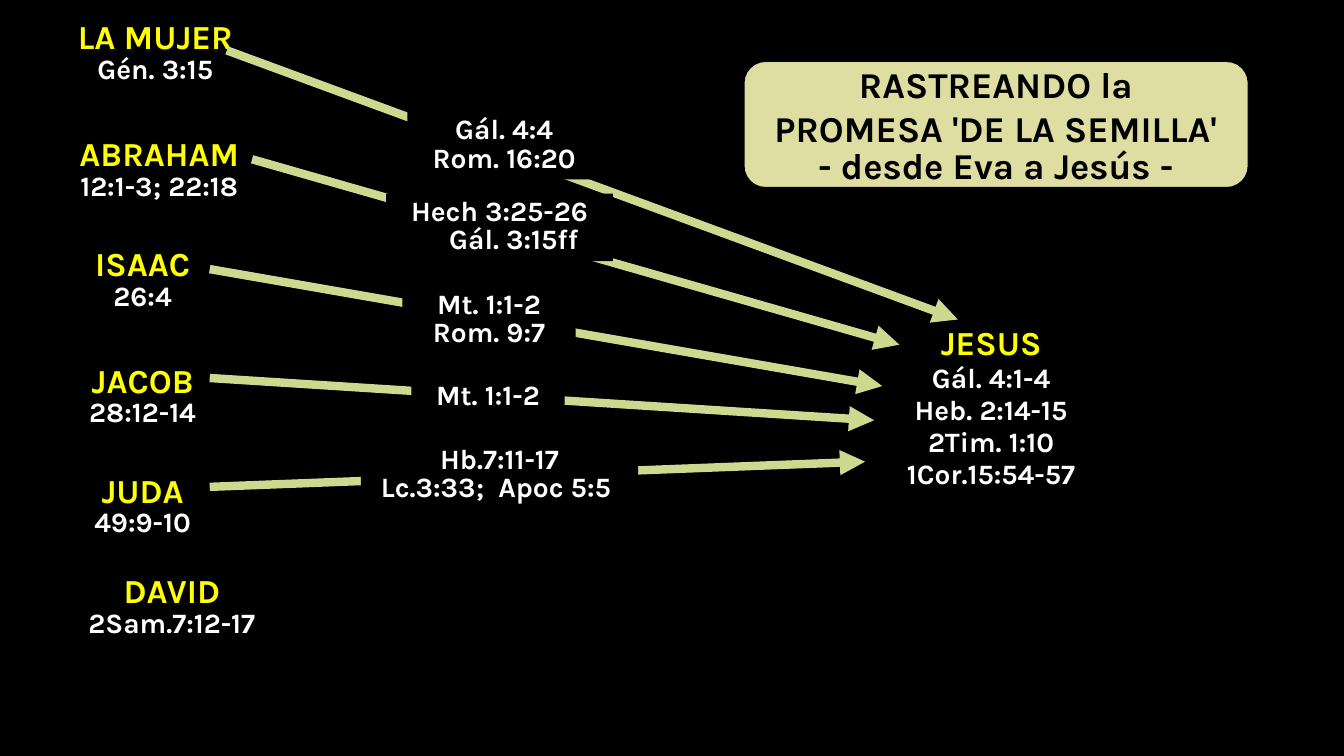
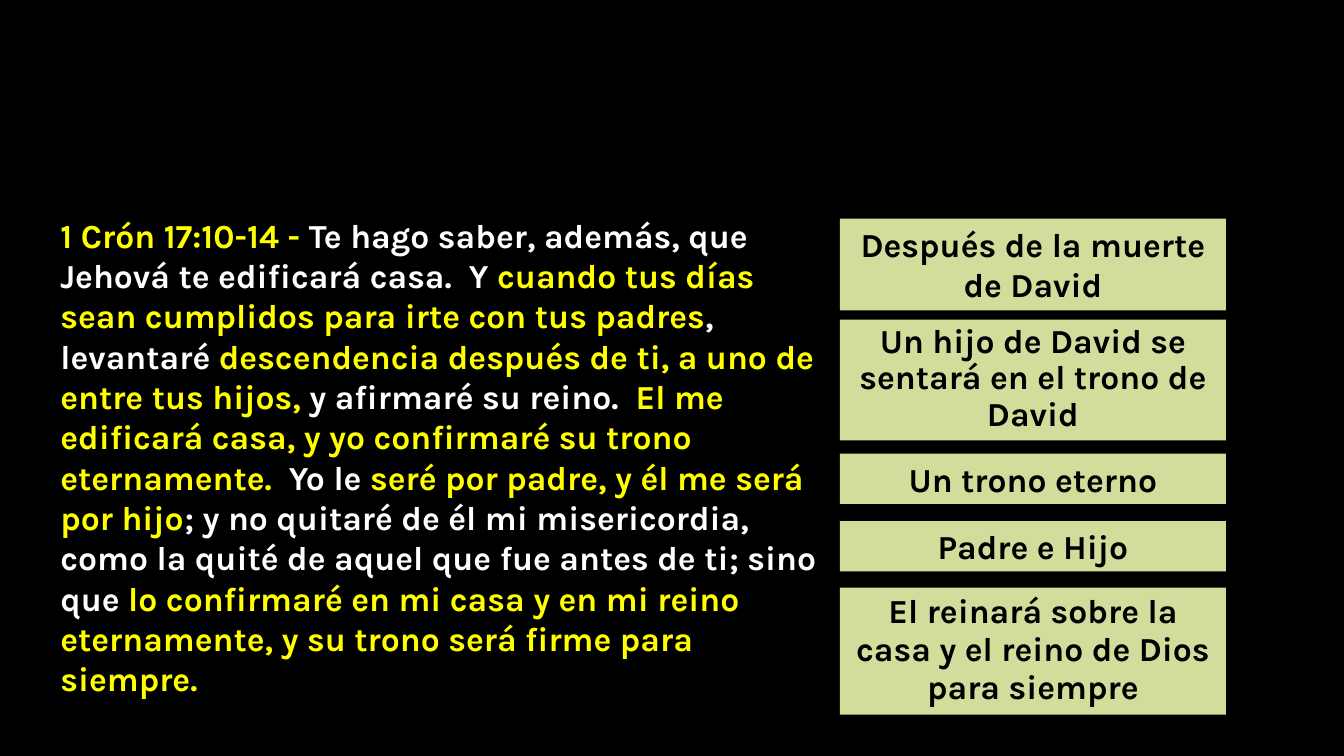
"""Build two slides tracing the promise of the seed from Eve to Jesus."""
from dataclasses import dataclass
from itertools import cycle
from typing import Any

from pptx import Presentation
from pptx.dml.color import RGBColor
from pptx.enum.shapes import MSO_CONNECTOR as Connector, MSO_SHAPE as Preset
from pptx.enum.text import MSO_ANCHOR as Anchor, MSO_AUTO_SIZE as AutoSize, PP_ALIGN as Align
from pptx.oxml.ns import qn
from pptx.util import Inches, Pt
from lxml.etree import SubElement

BLACK = RGBColor(0x00, 0x00, 0x00)
WHITE = RGBColor(0xFF, 0xFF, 0xFF)
YELLOW = RGBColor(0xFF, 0xFF, 0x00)
ARROW_GREEN = RGBColor(0xCD, 0xD9, 0x8F)
POINT_GREEN = RGBColor(0xD2, 0xDD, 0x9B)
BANNER_CREAM = RGBColor(0xDE, 0xDE, 0xA2)

FONT = {"name": "Karla", "bold": True}
NAME = FONT | {"size": Pt(24)}
REFERENCE = FONT | {"size": Pt(20)}
BANNER = FONT | {"size": Pt(26)}
GROWING = {"word_wrap": True, "auto_size": AutoSize.SHAPE_TO_FIT_TEXT, "vertical_anchor": Anchor.TOP}
CENTERED = {"word_wrap": False, "auto_size": AutoSize.NONE, "vertical_anchor": Anchor.MIDDLE}


@dataclass(frozen=True)
class Box:
    left: float
    top: float
    width: float
    height: float

    def lengths(self) -> tuple[int, ...]:
        return tuple(map(Inches, (self.left, self.top, self.width, self.height)))


@dataclass(frozen=True)
class Run:
    text: str
    color: RGBColor
    font: dict[str, Any]


@dataclass(frozen=True)
class Line:
    runs: tuple[Run, ...]
    spacing: float | None = None
    align: Align = Align.CENTER
    indent: float = 0


@dataclass(frozen=True)
class Person:
    box: Box
    name: str
    references: tuple[str, ...]
    spacing: float = 0.85


@dataclass(frozen=True)
class Fulfilment:
    box: Box
    references: tuple[str, ...]
    last_indent: float = 0


@dataclass(frozen=True)
class Arrow:
    start: tuple[float, float]
    end: tuple[float, float]


@dataclass(frozen=True)
class Point:
    top: float
    height: float
    text: str
    spacing: float | None = None


PEOPLE = (
    Person(Box(0.58, 0.17, 1.92, 0.74), "LA MUJER", ("Gén. 3:15",)),
    Person(Box(0.58, 1.33, 2, 1.02), "ABRAHAM", ("12:1-3; 22:18",)),
    Person(Box(0.58, 2.42, 1.67, 0.74), "ISAAC", ("26:4",)),
    Person(Box(0.58, 3.58, 1.67, 0.74), "JACOB", ("28:12-14",)),
    Person(Box(0.58, 4.67, 1.67, 0.74), "JUDA", ("49:9-10",)),
    Person(Box(0.58, 5.67, 2.25, 0.73), "DAVID", ("2Sam.7:12-17",)),
    Person(Box(8.67, 3.17, 2.32, 1.76), "JESUS",
           ("Gál. 4:1-4", "Heb. 2:14-15", "2Tim. 1:10", "1Cor.15:54-57"), 0.95),
)
ARROWS = (
    Arrow((2.25, 0.5), (9.5, 3.17)),
    Arrow((2.5, 1.58), (8.92, 3.42)),
    Arrow((2.08, 2.67), (8.75, 3.83)),
    Arrow((2.08, 3.75), (8.67, 4.17)),
    Arrow((2.08, 4.83), (8.58, 4.58)),
)
FULFILMENTS = (
    Fulfilment(Box(4.04, 1.11, 1.92, 0.67), ("Gál. 4:4", "Rom. 16:20")),
    Fulfilment(Box(3.83, 1.92, 2.25, 0.67), ("Hech 3:25-26", "Gál. 3:15ff"), 0.28),
    Fulfilment(Box(3.99, 2.84, 1.72, 0.67), ("Mt. 1:1-2", "Rom. 9:7")),
    Fulfilment(Box(4.08, 3.75, 1.52, 0.39), ("Mt. 1:1-2",)),
    Fulfilment(Box(3.58, 4.38, 2.75, 0.67), ("Hb.7:11-17", "Lc.3:33;  Apoc 5:5 ")),
)
BANNER_LINES = (
    ("RASTREANDO la", None),
    ("PROMESA 'DE LA SEMILLA'", None),
    ("- desde Eva a Jesús -", 0.85),
)
VERSE = (
    "1 Crón 17:10-14 - ",
    "Te hago saber, además, que Jehová te edificará casa.  Y ",
    "cuando tus días sean cumplidos para irte con tus padres",
    ", levantaré ",
    "descendencia después de ti, a uno de entre tus hijos, ",
    "y afirmaré su reino.  ",
    "El me edificará casa, y yo confirmaré su trono eternamente.",
    "  Yo le ",
    "seré por padre, y él me será por hijo",
    "; y no quitaré de él mi misericordia, como la quité de aquel que fue antes de ti; sino que ",
    "lo confirmaré en mi casa y en mi reino eternamente, y su trono será firme para siempre.",
)
POINTS = (
    Point(2.17, 0.91, "Después de la muerte de David"),
    Point(3.17, 1.2, "Un hijo de David se sentará en el trono de David", 0.9),
    Point(4.5, 0.5, "Un trono eterno"),
    Point(5.17, 0.5, "Padre e Hijo"),
    Point(5.83, 1.26, "El reinará sobre la casa y el reino de Dios para siempre", 0.95),
)


def apply_format(target: Any, values: dict[str, Any]) -> None:
    """Set each named attribute of the target."""
    for attribute, value in values.items():
        setattr(target, attribute, value)


def write_lines(frame: Any, lines: list[Line], layout: dict[str, Any]) -> None:
    """Fill a text frame with formatted paragraphs."""
    apply_format(frame, layout)
    for index, line in enumerate(lines):
        paragraph = frame.add_paragraph() if index else frame.paragraphs[0]
        apply_format(paragraph, {"alignment": line.align, "line_spacing": line.spacing})
        if line.indent:
            paragraph._p.get_or_add_pPr().set("marL", str(Inches(line.indent)))
        for part in line.runs:
            run = paragraph.add_run()
            run.text = part.text
            apply_format(run.font, part.font)
            run.font.color.rgb = part.color


def add_text(slide: Any, box: Box, lines: list[Line]) -> None:
    """Add a wrapped text box."""
    write_lines(slide.shapes.add_textbox(*box.lengths()).text_frame, lines, GROWING)


def add_panel(slide: Any, box: Box, fill: RGBColor, lines: list[Line],
              preset: Preset = Preset.RECTANGLE, layout: dict[str, Any] = GROWING) -> Any:
    """Add a filled shape without an outline and return it."""
    panel = slide.shapes.add_shape(preset, *box.lengths())
    panel.shadow.inherit = False
    panel.fill.solid()
    panel.fill.fore_color.rgb = fill
    panel.line.fill.background()
    write_lines(panel.text_frame, lines, layout)
    return panel


def add_arrow(slide: Any, arrow: Arrow) -> None:
    """Add a thick straight arrow."""
    connector = slide.shapes.add_connector(
        Connector.STRAIGHT, *map(Inches, arrow.start + arrow.end))
    connector.line.color.rgb = ARROW_GREEN
    connector.line.width = Pt(6)
    SubElement(connector.line._get_or_add_ln(), qn("a:tailEnd"), type="triangle")
    SubElement(connector._element.spPr, qn("a:effectLst"))


def add_person(slide: Any, person: Person) -> None:
    """Add a name with its references below."""
    runs = [Run(person.name, YELLOW, NAME)]
    runs += [Run(text, WHITE, REFERENCE) for text in person.references]
    add_text(slide, person.box, [Line((run,), person.spacing) for run in runs])


def add_fulfilment(slide: Any, fulfilment: Fulfilment) -> None:
    """Add the references that interrupt an arrow."""
    last = len(fulfilment.references) - 1
    lines = [Line((Run(text, WHITE, REFERENCE),), 0.85,
                  indent=fulfilment.last_indent if index == last else 0)
             for index, text in enumerate(fulfilment.references)]
    add_panel(slide, fulfilment.box, BLACK, lines)


def add_banner(slide: Any) -> None:
    """Add the rounded title banner."""
    lines = [Line((Run(text, BLACK, BANNER),), spacing) for text, spacing in BANNER_LINES]
    banner = add_panel(slide, Box(7.38, 0.61, 5, 1.25), BANNER_CREAM, lines,
                       Preset.ROUNDED_RECTANGLE, CENTERED)
    banner.adjustments[0] = 0.17
    banner.line.color.rgb = BLACK
    banner.line.width = Pt(0.75)


def add_black_slide(deck: Any) -> Any:
    """Add a blank slide with a black background."""
    slide = deck.slides.add_slide(deck.slide_layouts[6])
    slide.background.fill.solid()
    slide.background.fill.fore_color.rgb = BLACK
    return slide


def build_promise_slide(deck: Any) -> None:
    """Draw the lines of promise from Eve to Jesus."""
    slide = add_black_slide(deck)
    for person in PEOPLE:
        add_person(slide, person)
    for arrow in ARROWS:
        add_arrow(slide, arrow)
    for fulfilment in FULFILMENTS:
        add_fulfilment(slide, fulfilment)
    add_banner(slide)


def build_covenant_slide(deck: Any) -> None:
    """Draw the covenant verse beside its main points."""
    slide = add_black_slide(deck)
    for point in POINTS:
        add_panel(slide, Box(8.33, point.top, 3.83, point.height), POINT_GREEN,
                  [Line((Run(point.text, BLACK, NAME),), point.spacing)])
    runs = tuple(Run(text, color, NAME) for text, color in zip(VERSE, cycle((YELLOW, WHITE))))
    add_text(slide, Box(0.5, 2.08, 7.75, 4.95), [Line(runs, align=Align.LEFT)])


def main() -> None:
    """Build and save the deck."""
    deck = Presentation()
    apply_format(deck, {"slide_width": Inches(13.33), "slide_height": Inches(7.5)})
    build_promise_slide(deck)
    build_covenant_slide(deck)
    deck.save("out.pptx")


if __name__ == "__main__":
    main()
